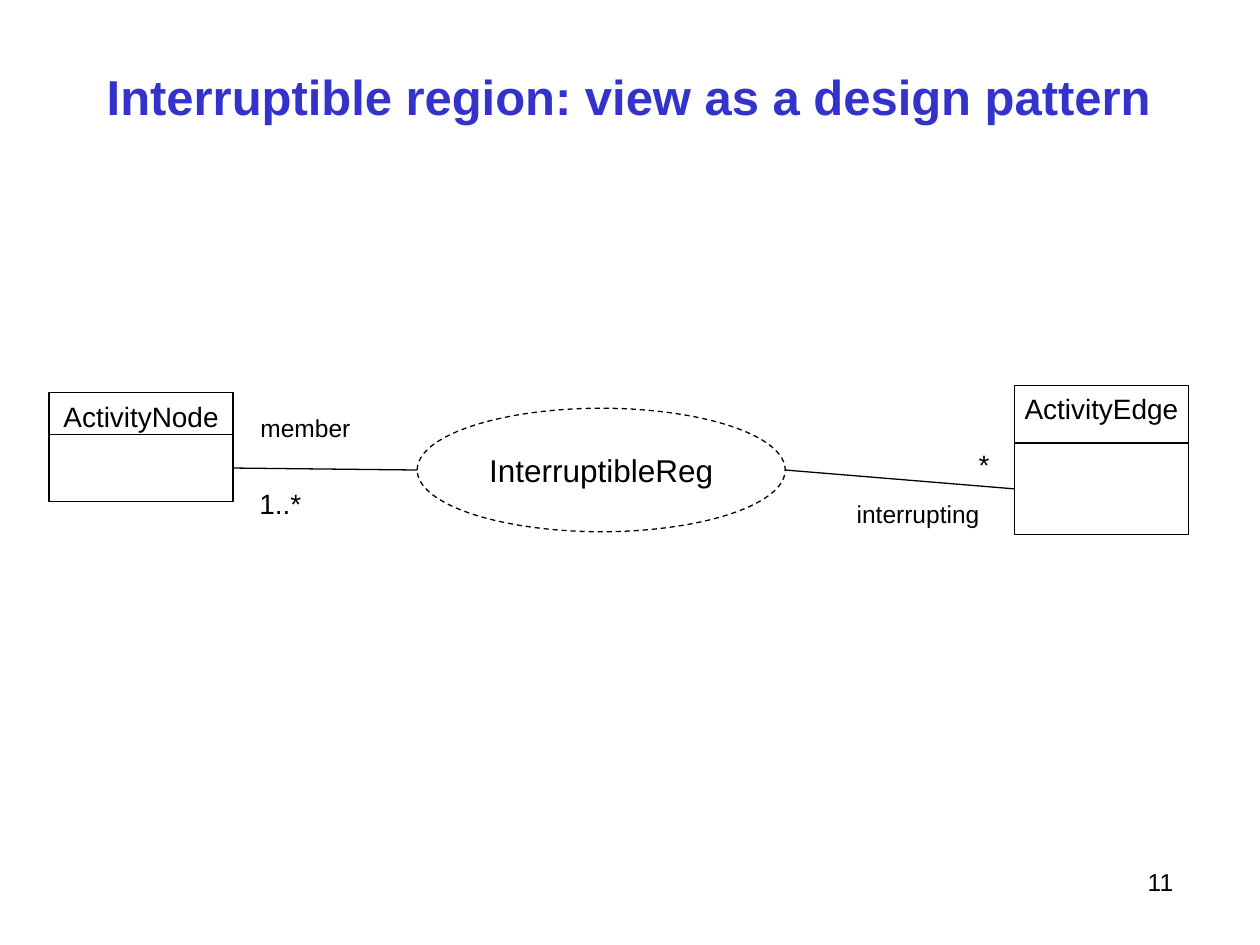
"""Build a slide showing the interruptible region as a design pattern."""
from lxml.etree import SubElement
from pptx import Presentation
from pptx.dml.color import RGBColor
from pptx.enum.dml import MSO_LINE
from pptx.enum.shapes import MSO_CONNECTOR, MSO_SHAPE
from pptx.enum.text import MSO_ANCHOR, PP_ALIGN
from pptx.oxml.ns import qn
from pptx.util import Cm, Pt

FONT = "Arial"
BLACK, WHITE, BLUE = "000000", "FFFFFF", "3333CC"
LEFT, CENTER, RIGHT = PP_ALIGN.LEFT, PP_ALIGN.CENTER, PP_ALIGN.RIGHT
LEFT_SITE, RIGHT_SITE = 1, 3

TITLE = ("Interruptible region: view as a design pattern", (1.27, 0.64, 22.81, 2.59))
PAGE_NUMBER = ("11", (18.62, 17.35, 5.28, 1.27))
PATTERN = ("InterruptibleReg", (8.41, 8.23, 7.42, 2.49))
CLASSES = [
    {"name": "ActivityNode", "left": 0.99, "top": 7.92, "width": 3.71,
     "header": 0.84, "body": 1.35},
    {"name": "ActivityEdge", "left": 20.45, "top": 7.77, "width": 3.51,
     "header": 1.16, "body": 1.85},
]
LABELS = [
    ("interrupting", (17.02, 9.93, 3.18, 0.86), 14, True),
    ("member", (5, 8.2, 4.39, 0.86), 14, True),
    ("*", (19.48, 8.89, 0.74, 0.94), 16, False),
    ("1..*", (4.98, 9.68, 1.37, 0.94), 16, False),
]


def color(value):
    return RGBColor.from_string(value)


def write(shape, text, size, align=LEFT, anchor=MSO_ANCHOR.TOP, wrap=True,
          font_color=BLACK, bold=False):
    frame = shape.text_frame
    frame.text = text
    frame.word_wrap = wrap
    frame.vertical_anchor = anchor
    paragraph = frame.paragraphs[0]
    paragraph.alignment = align
    font = paragraph.runs[0].font
    font.name, font.size, font.bold = FONT, Pt(size), bold
    font.color.rgb = color(font_color)


def add_text(slide, text, box, size, **style):
    write(slide.shapes.add_textbox(*map(Cm, box)), text, size, **style)


def outline(shape):
    shape.line.color.rgb = color(BLACK)
    shape.line.width = Pt(0.75)


def add_outlined(shapes, kind, box, fill=None):
    shape = shapes.add_shape(kind, *map(Cm, box))
    shape.shadow.inherit = False
    outline(shape)
    if fill:
        shape.fill.solid()
        shape.fill.fore_color.rgb = color(fill)
    else:
        shape.fill.background()
    return shape


def add_class(slide, name, left, top, width, header, body):
    group = slide.shapes.add_group_shape()
    body_shape = add_outlined(group.shapes, MSO_SHAPE.RECTANGLE,
                              (left, top + header, width, body))
    header_shape = add_outlined(group.shapes, MSO_SHAPE.RECTANGLE,
                                (left, top, width, header), WHITE)
    write(header_shape, name, 16, align=CENTER, wrap=False)
    return body_shape


def connect(slide, pattern, body):
    if body.left < pattern.left:
        start_x, site = pattern.left, RIGHT_SITE
    else:
        start_x, site = pattern.left + pattern.width, LEFT_SITE
    start_y = pattern.top + pattern.height // 2
    connector = slide.shapes.add_connector(
        MSO_CONNECTOR.STRAIGHT, start_x, start_y, body.left, body.top)
    connector.end_connect(body, site)
    outline(connector)
    SubElement(connector.element.spPr, qn("a:effectLst"))


def main():
    presentation = Presentation()
    presentation.slide_width, presentation.slide_height = Cm(25.4), Cm(19.05)
    slide = presentation.slides.add_slide(presentation.slide_layouts[6])

    add_text(slide, *TITLE, 28, align=CENTER, anchor=MSO_ANCHOR.MIDDLE,
             font_color=BLUE, bold=True)
    add_text(slide, *PAGE_NUMBER, 14, align=RIGHT)

    name, box = PATTERN
    pattern = add_outlined(slide.shapes, MSO_SHAPE.OVAL, box)
    pattern.line.dash_style = MSO_LINE.DASH
    write(pattern, name, 18, align=CENTER, anchor=MSO_ANCHOR.MIDDLE)

    for item in CLASSES:
        connect(slide, pattern, add_class(slide, **item))

    for text, box, size, wrap in LABELS:
        add_text(slide, text, box, size, wrap=wrap)

    presentation.save("out.pptx")


if __name__ == "__main__":
    main()
